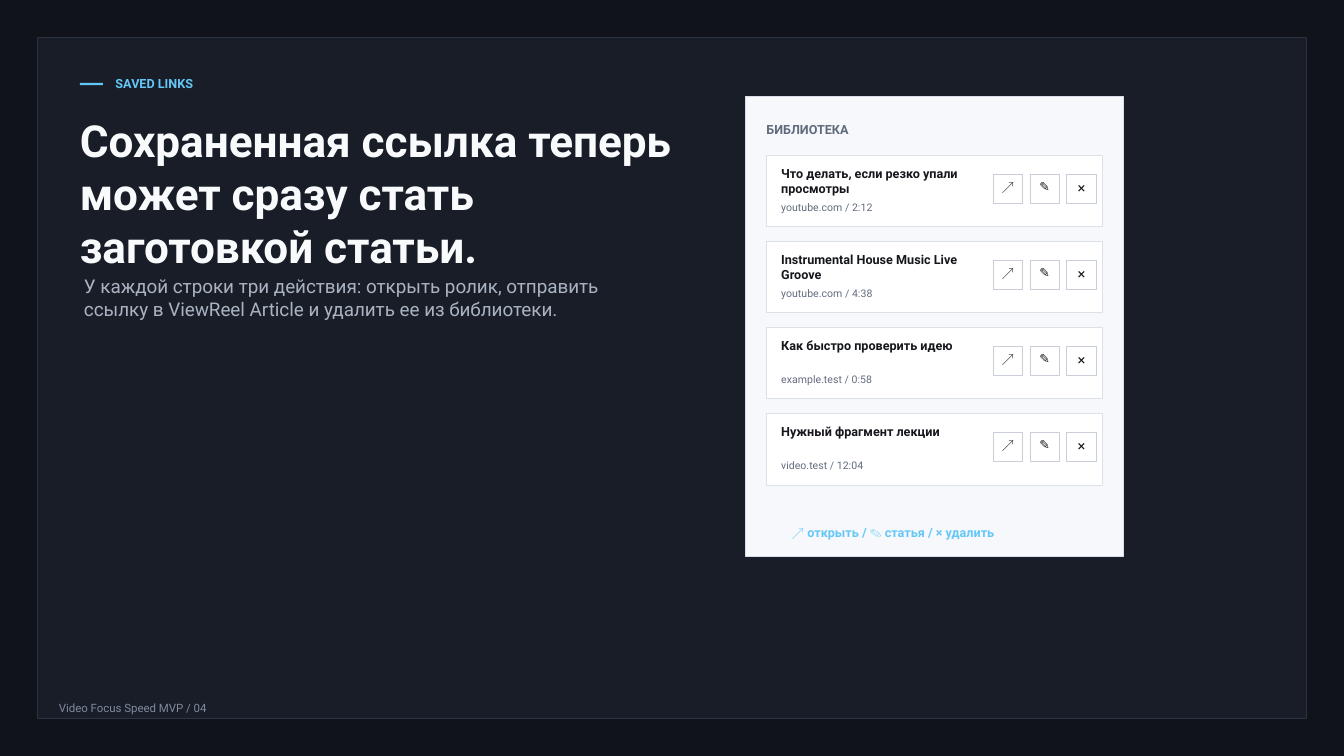
from pptx import Presentation
from pptx.dml.color import RGBColor
from pptx.enum.shapes import MSO_SHAPE
from pptx.enum.text import MSO_ANCHOR, MSO_AUTO_SIZE, PP_ALIGN
from pptx.util import Emu, Pt

KICKER = "SAVED LINKS"
TITLE = "Сохраненная ссылка теперь может сразу стать заготовкой статьи."
LEAD = ("У каждой строки три действия: открыть ролик, отправить ссылку "
        "в ViewReel Article и удалить ее из библиотеки.")
LIBRARY = "БИБЛИОТЕКА"
LINKS = [
    ("Что делать, если резко упали просмотры", "youtube.com / 2:12"),
    ("Instrumental House Music Live Groove", "youtube.com / 4:38"),
    ("Как быстро проверить идею", "example.test / 0:58"),
    ("Нужный фрагмент лекции", "video.test / 12:04"),
]
ACTIONS = [("↗", 9), ("✎", 9), ("×", 10.5)]
HINT = "↗ открыть / ✎ статья / × удалить"
FOOTER = "Video Focus Speed MVP / 04"

PX = 9525
WIDTH, HEIGHT = 1280, 720
ACCENT, INK, MUTED, WHITE = "65C7F7", "15171C", "626B7D", "FFFFFF"
CARD_X, CARD_Y, CARD_W, CARD_H, CARD_STEP = 730, 148, 320, 68, 82
BUTTON_X, BUTTON_SIZE, BUTTON_STEP = 216, 28, 35


def color(value):
    return RGBColor.from_string(value)


def box(x, y, w, h):
    return [Emu(v * PX) for v in (x, y, w, h)]


def add_rect(s, x, y, w, h, fill, line=None):
    sp = s.shapes.add_shape(MSO_SHAPE.RECTANGLE, *box(x, y, w, h))
    sp.shadow.inherit = False
    sp.fill.solid()
    sp.fill.fore_color.rgb = color(fill)
    if line:
        sp.line.color.rgb = color(line)
        sp.line.width = Pt(0.75)
    else:
        sp.line.fill.background()


def set_text(sp, text, size, ink, bold=False, align=PP_ALIGN.LEFT):
    tf = sp.text_frame
    frame = dict(margin_left=0, margin_top=0, margin_right=0, margin_bottom=0,
                 word_wrap=True, auto_size=MSO_AUTO_SIZE.NONE,
                 vertical_anchor=MSO_ANCHOR.TOP)
    for name, value in frame.items():
        setattr(tf, name, value)
    p = tf.paragraphs[0]
    p.alignment = align
    r = p.add_run()
    r.text = text
    for name, value in dict(name="Roboto", size=Pt(size), bold=bold).items():
        setattr(r.font, name, value)
    r.font.color.rgb = color(ink)


def add_text(s, x, y, w, h, *args, **kwargs):
    set_text(s.shapes.add_textbox(*box(x, y, w, h)), *args, **kwargs)


def add_title(s, x, y, w, h):
    """Fill the title placeholder and bring it in front of the panel."""
    sp = s.shapes.title
    sp.left, sp.top, sp.width, sp.height = box(x, y, w, h)
    set_text(sp, TITLE, 31.5, "F8FAFC", bold=True)
    sp.element.getparent().append(sp.element)


def add_card(s, y, name, meta):
    add_rect(s, CARD_X, y, CARD_W, CARD_H, WHITE, "DCE0E8")
    add_text(s, CARD_X + 14, y + 10, 186, 28, name, 9, INK, bold=True)
    add_text(s, CARD_X + 14, y + 43, 160, 14, meta, 7.5, MUTED)
    for i, (symbol, size) in enumerate(ACTIONS):
        x = CARD_X + BUTTON_X + i * BUTTON_STEP
        add_rect(s, x, y + 18, BUTTON_SIZE, BUTTON_SIZE, WHITE, "C9CED8")
        add_text(s, x + 8, y + 22, 12, 14, symbol, size, INK,
                 align=PP_ALIGN.CENTER)


def main():
    prs = Presentation()
    prs.slide_width, prs.slide_height = Emu(WIDTH * PX), Emu(HEIGHT * PX)
    s = prs.slides.add_slide(prs.slide_layouts[5])

    add_rect(s, 0, 0, WIDTH, HEIGHT, "10131A")
    add_rect(s, 36, 36, 1208, 648, "181D28", "2B3344")
    add_rect(s, 76, 79, 22, 2, ACCENT)
    add_text(s, 110, 72, 260, 22, KICKER, 9, ACCENT, bold=True)
    add_title(s, 76, 108, 590, 126)
    add_text(s, 80, 262, 540, 80, LEAD, 13.5, "AAB3C2")

    add_rect(s, 710, 92, 360, 438, "F6F8FB", "D7DDEA")
    add_text(s, CARD_X, 116, 200, 18, LIBRARY, 9, MUTED, bold=True)
    for i, (name, meta) in enumerate(LINKS):
        add_card(s, CARD_Y + i * CARD_STEP, name, meta)
    add_text(s, 754, 500, 260, 18, HINT, 9, ACCENT, bold=True)
    add_text(s, 56, 668, 260, 20, FOOTER, 8.2, "7F8A9D")

    prs.save("out.pptx")


if __name__ == "__main__":
    main()
